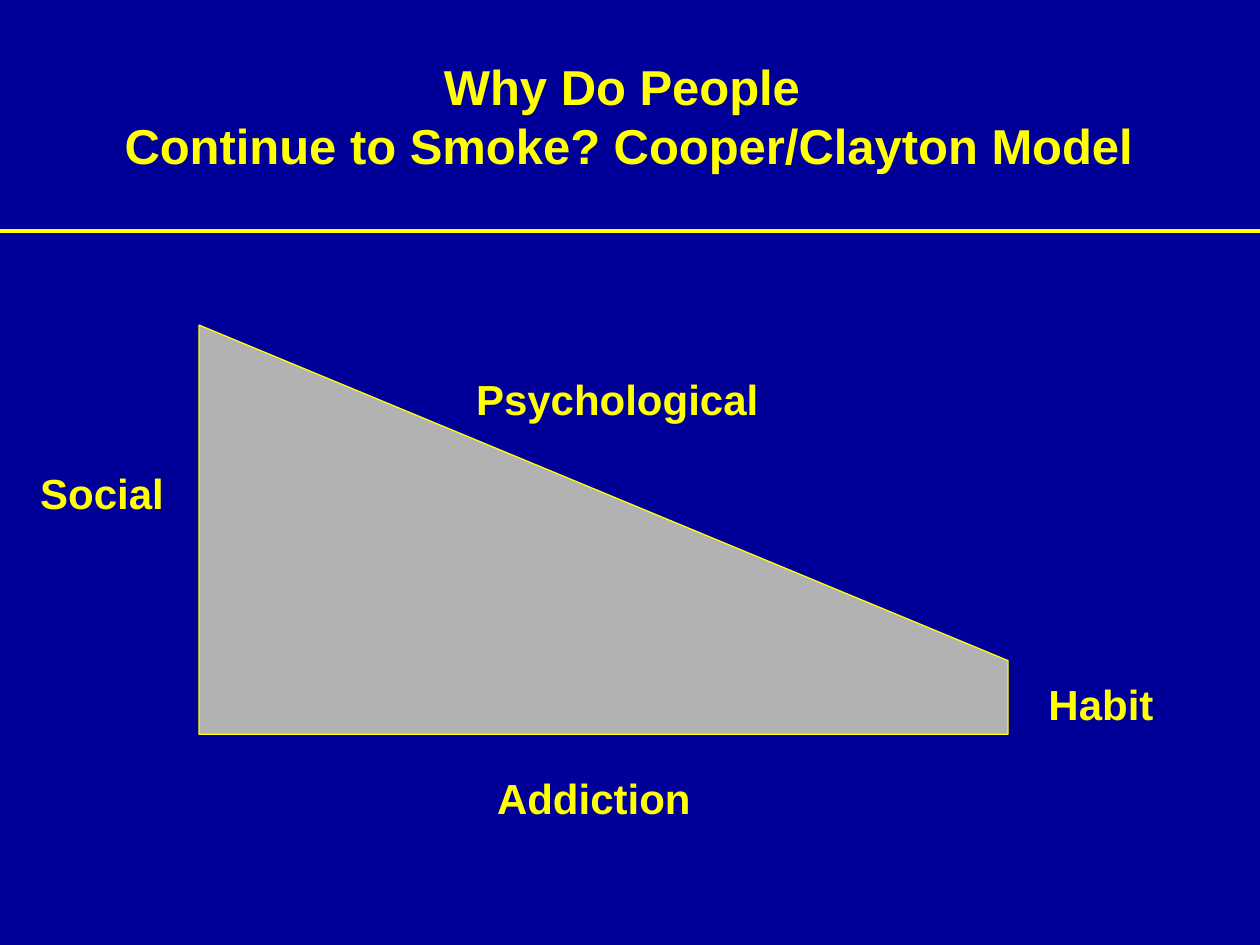
from pptx import Presentation
from pptx.dml.color import RGBColor
from pptx.enum.shapes import MSO_CONNECTOR
from pptx.enum.text import MSO_ANCHOR, MSO_AUTO_SIZE, PP_ALIGN
from pptx.oxml.ns import qn
from pptx.util import Inches, Pt
from lxml import etree

NAVY, YELLOW, GRAY = "000099", "FFFF00", "B2B2B2"
WIDTH, HEIGHT = 10, 7.5


def color(value):
    return RGBColor.from_string(value)


def place(sp, x, y, w, h):
    sp.left, sp.top, sp.width, sp.height = (Inches(v) for v in (x, y, w, h))


def write(sp, text, size=24, fill=YELLOW, font="Arial", bold=True,
          align=PP_ALIGN.CENTER, anchor=MSO_ANCHOR.TOP, wrap=False,
          fit=MSO_AUTO_SIZE.SHAPE_TO_FIT_TEXT):
    tf = sp.text_frame
    tf.word_wrap, tf.vertical_anchor, tf.auto_size = wrap, anchor, fit
    p = tf.paragraphs[0]
    p.text = text
    p.alignment = align
    for r in p.runs:
        r.font.name, r.font.size, r.font.bold = font, Pt(size), bold
        r.font.color.rgb = color(fill)


def add_header(s, x, y, w, h):
    """Centred title, with a rule along the bottom of the box."""
    title = s.shapes.title
    place(title, x + 0.074 * w, y + 0.16 * h, 0.85 * w, 0.68 * h)
    write(title, "Why Do People \vContinue to Smoke? Cooper/Clayton Model",
          size=28, anchor=MSO_ANCHOR.MIDDLE, wrap=True, fit=MSO_AUTO_SIZE.NONE)
    rule = s.shapes.add_connector(MSO_CONNECTOR.STRAIGHT, Inches(x),
                                  Inches(y + h), Inches(x + w), Inches(y + h))
    rule.line.color.rgb = color(YELLOW)
    rule.line.width = Pt(2.25)
    etree.SubElement(rule._element.spPr, qn("a:effectLst"))


def add_model(s, x, y, w, h):
    """Sloping wedge filling the box, with one label beside each side."""
    corners = [(0, 1), (0, 0), (1, 0.82), (1, 1)]
    points = [(Inches(x + u * w), Inches(y + v * h)) for u, v in corners]
    builder = s.shapes.build_freeform(*points[0], scale=1.0)
    builder.add_line_segments(points[1:], close=True)
    wedge = builder.convert_to_shape()
    wedge.shadow.inherit = False
    wedge.fill.solid()
    wedge.fill.fore_color.rgb = color(GRAY)
    wedge.line.color.rgb = color(YELLOW)
    wedge.line.width = Pt(0.75)

    # Label centres as shares of the box, widths in inches
    labels = [("Social", -0.12, 0.41, 1.18), ("Psychological", 0.517, 0.18, 2.44),
              ("Habit", 1.115, 0.925, 1.03), ("Addiction", 0.488, 1.155, 1.74)]
    label_h = 0.5
    for text, u, v, label_w in labels:
        label = s.shapes.add_textbox(0, 0, 0, 0)
        place(label, x + u * w - label_w / 2, y + v * h - label_h / 2,
              label_w, label_h)
        write(label, text)


def main():
    prs = Presentation()
    prs.slide_width, prs.slide_height = Inches(WIDTH), Inches(HEIGHT)
    s = prs.slides.add_slide(prs.slide_layouts.get_by_name("Title Only"))
    s.background.fill.solid()
    s.background.fill.fore_color.rgb = color(NAVY)
    add_model(s, 0.158 * WIDTH, 0.344 * HEIGHT, 0.642 * WIDTH, 0.433 * HEIGHT)
    add_header(s, 0, 0, WIDTH, 0.244 * HEIGHT)
    prs.save("out.pptx")


if __name__ == "__main__":
    main()
